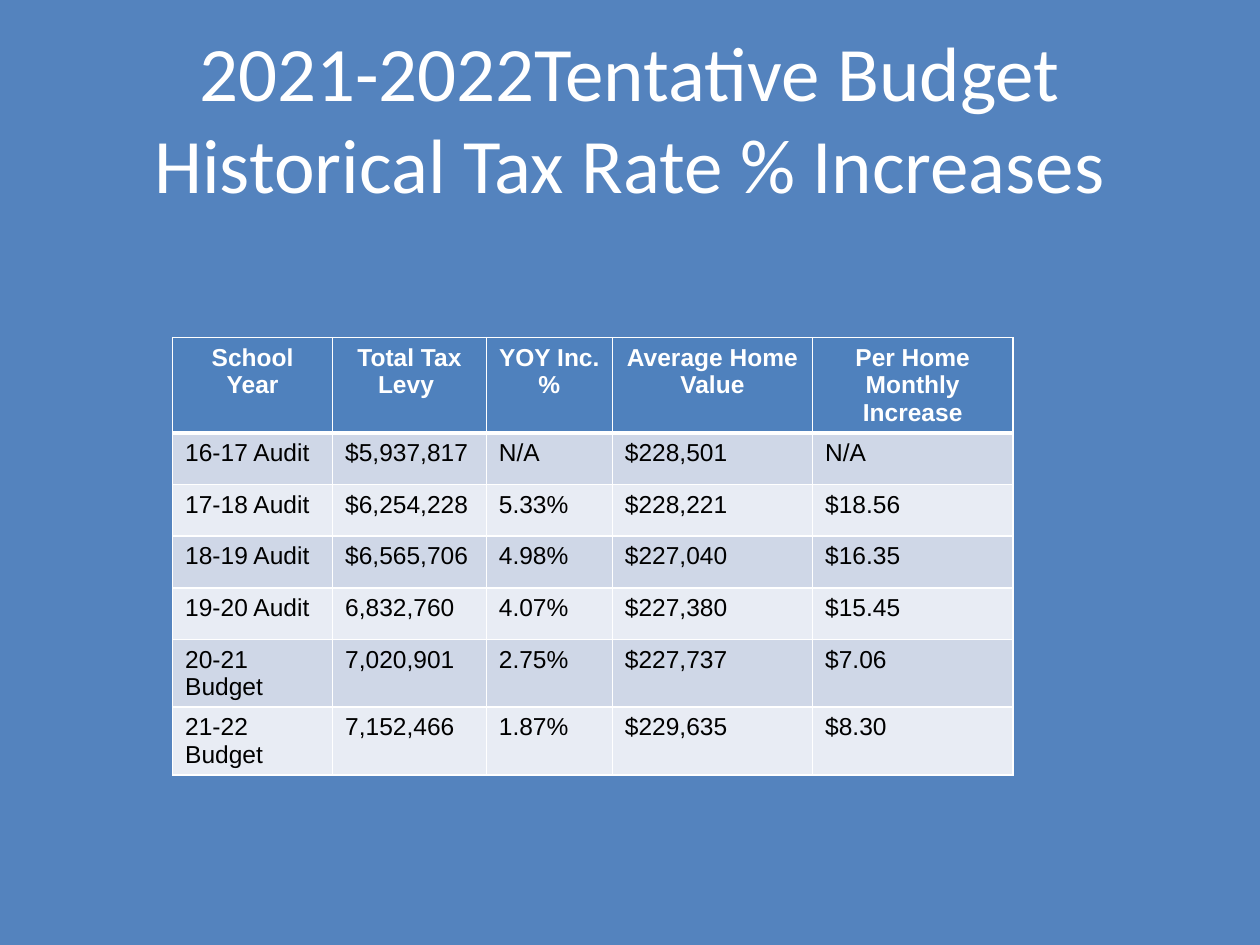
import dataclasses

import lxml.etree
import pptx
import pptx.dml.color
import pptx.enum.text
import pptx.oxml.ns
import pptx.util

RGBColor = pptx.dml.color.RGBColor
WHITE = RGBColor(0xFF, 0xFF, 0xFF)
BLACK = RGBColor(0x00, 0x00, 0x00)
BACKGROUND_BLUE = RGBColor(0x54, 0x83, 0xBE)
HEADER_BLUE = RGBColor(0x4F, 0x81, 0xBD)
DARK_BAND = RGBColor(0xCF, 0xD7, 0xE7)
LIGHT_BAND = RGBColor(0xE8, 0xEC, 0xF4)

SLIDE_WIDTH = pptx.util.Inches(10)
SLIDE_HEIGHT = pptx.util.Inches(7.5)
CENTER = pptx.enum.text.PP_ALIGN.CENTER
LEFT = pptx.enum.text.PP_ALIGN.LEFT
THIN, THICK = 1, 3

TITLE_LINES = ("2021-2022Tentative Budget", "Historical Tax Rate % Increases")
TITLE_FONT = {"name": "Calibri", "size": pptx.util.Pt(44)}
TABLE_FONT = {"name": "Arial", "size": pptx.util.Pt(14)}
COLUMN_WIDTHS = (1.27, 1.22, 1, 1.59, 1.59)
ROW_HEIGHT = pptx.util.Inches(0.41)

HEADINGS = (
    "School Year", "Total Tax Levy ", "YOY Inc. %",
    "Average Home Value", "Per Home Monthly Increase",
)
TAX_YEARS = (
    ("16-17 Audit", "$5,937,817", "N/A", "$228,501", "N/A"),
    ("17-18 Audit", "$6,254,228", "5.33%", "$228,221", "$18.56"),
    ("18-19 Audit", "$6,565,706", "4.98%", "$227,040", "$16.35"),
    ("19-20 Audit", "6,832,760", "4.07%", "$227,380", "$15.45"),
    ("20-21 Budget", "7,020,901", "2.75%", "$227,737", "$7.06"),
    ("21-22 Budget", "7,152,466", "1.87%", "$229,635", "$8.30"),
)


@dataclasses.dataclass(frozen=True)
class Area:
    left: float
    top: float
    width: float
    height: float

    def lengths(self) -> dict[str, int]:
        return {
            "left": round(self.left * SLIDE_WIDTH),
            "top": round(self.top * SLIDE_HEIGHT),
            "width": round(self.width * SLIDE_WIDTH),
            "height": round(self.height * SLIDE_HEIGHT),
        }


@dataclasses.dataclass(frozen=True)
class RowStyle:
    fill: RGBColor
    color: RGBColor
    bold: bool
    alignment: pptx.enum.text.PP_ALIGN
    top_line: int
    bottom_line: int


TITLE_AREA = Area(0.05, 0.04, 0.9, 1 / 6)
TABLE_AREA = Area(0.137, 2.68 / 7.5, 0.667, 7 * 0.41 / 7.5)


def set_values(target: object, values: dict) -> None:
    for name, value in values.items():
        setattr(target, name, value)


def format_span(span, font: dict, color: RGBColor, bold: bool) -> None:
    set_values(span.font, {**font, "bold": bold})
    span.font.color.rgb = color


def draw_borders(cell, style: RowStyle) -> None:
    properties = cell._tc.get_or_add_tcPr()
    widths = {"lnL": THIN, "lnR": THIN, "lnT": style.top_line, "lnB": style.bottom_line}
    for position, (tag, points) in enumerate(widths.items()):
        line = lxml.etree.Element(pptx.oxml.ns.qn(f"a:{tag}"), w=str(pptx.util.Pt(points)))
        fill = lxml.etree.SubElement(line, pptx.oxml.ns.qn("a:solidFill"))
        lxml.etree.SubElement(fill, pptx.oxml.ns.qn("a:srgbClr"), val=str(WHITE))
        properties.insert(position, line)


def draw_row(row, texts: tuple[str, ...], style: RowStyle) -> None:
    row.height = ROW_HEIGHT
    for cell, text in zip(row.cells, texts):
        cell.fill.solid()
        cell.fill.fore_color.rgb = style.fill
        draw_borders(cell, style)
        para = cell.text_frame.paragraphs[0]
        para.alignment = style.alignment
        span = para.add_run()
        span.text = text
        format_span(span, TABLE_FONT, style.color, style.bold)


def draw_title(page) -> None:
    box = page.shapes.title
    set_values(box, TITLE_AREA.lengths())
    set_values(box.text_frame, {
        "word_wrap": True,
        "auto_size": pptx.enum.text.MSO_AUTO_SIZE.NONE,
        "vertical_anchor": pptx.enum.text.MSO_ANCHOR.MIDDLE,
    })
    para = box.text_frame.paragraphs[0]
    para.alignment = CENTER
    for number, text in enumerate(TITLE_LINES):
        if number:
            para.add_line_break()
        span = para.add_run()
        span.text = text
        format_span(span, TITLE_FONT, WHITE, False)


def draw_tax_table(page) -> None:
    table = page.shapes.add_table(
        len(TAX_YEARS) + 1, len(HEADINGS), **TABLE_AREA.lengths()
    ).table
    for column, width in zip(table.columns, COLUMN_WIDTHS):
        column.width = pptx.util.Inches(width)
    header = RowStyle(HEADER_BLUE, WHITE, True, CENTER, THIN, THICK)
    draw_row(table.rows[0], HEADINGS, header)
    for number, texts in enumerate(TAX_YEARS):
        band = LIGHT_BAND if number % 2 else DARK_BAND
        top_line = THIN if number else THICK
        style = RowStyle(band, BLACK, False, LEFT, top_line, THIN)
        draw_row(table.rows[number + 1], texts, style)


def main() -> None:
    deck = pptx.Presentation()
    set_values(deck, {"slide_width": SLIDE_WIDTH, "slide_height": SLIDE_HEIGHT})
    page = deck.slides.add_slide(deck.slide_layouts.get_by_name("Title Only"))
    page.background.fill.solid()
    page.background.fill.fore_color.rgb = BACKGROUND_BLUE
    draw_title(page)
    draw_tax_table(page)
    deck.save("out.pptx")


if __name__ == "__main__":
    main()
